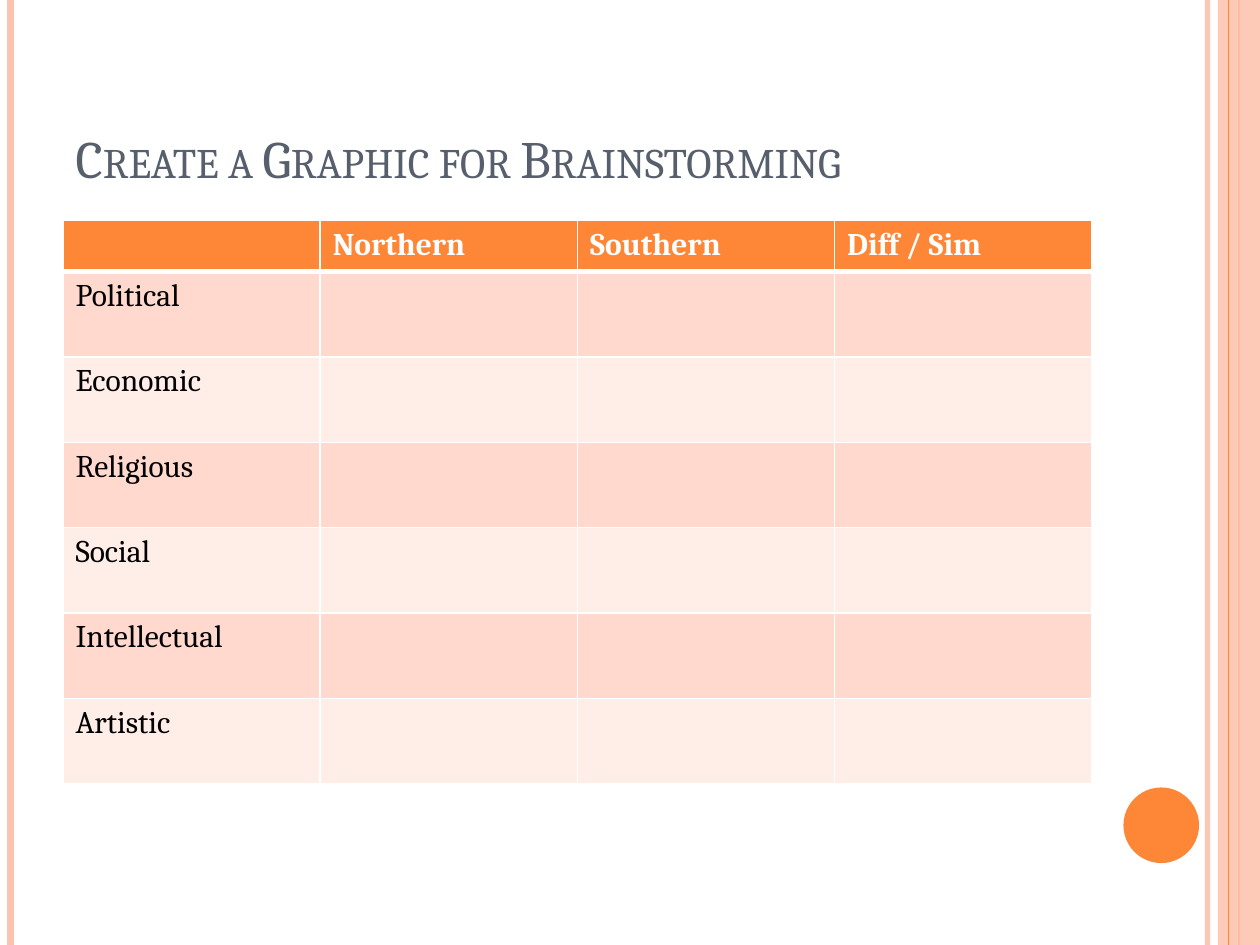
"""Builds a brainstorming slide with a comparison table."""
from lxml import etree
from pptx import Presentation
from pptx.dml.color import RGBColor
from pptx.enum.shapes import MSO_CONNECTOR, MSO_SHAPE
from pptx.enum.text import MSO_ANCHOR, MSO_AUTO_SIZE, PP_ALIGN
from pptx.oxml.ns import qn
from pptx.util import Inches, Pt

STRAIGHT = MSO_CONNECTOR.STRAIGHT
RECTANGLE, OVAL = MSO_SHAPE.RECTANGLE, MSO_SHAPE.OVAL
BOTTOM, LEFT, NO_FIT = MSO_ANCHOR.BOTTOM, PP_ALIGN.LEFT, MSO_AUTO_SIZE.NONE
TITLE_ONLY = 5
ROWS = 90
WHITE, BLACK, SLATE = "FFFFFF", "000000", "575F6D"
ORANGE, PEACH = "FE8637", "FEC3AE"
BANDS = ("FFD9CE", "FFEDE8")

HEADINGS = ["", "Northern", "Southern", "Diff / Sim"]
TOPICS = ["Political", "Economic", "Religious", "Social", "Intellectual", "Artistic"]


def rgb(code):
    """Turn a hex string into a colour."""
    return RGBColor.from_string(code)


def grid(units):
    """Turn grid units, twelve to the inch, into a length."""
    return Inches(units / 12)


def set_alpha(element, percent):
    """Make the first solid colour inside an element translucent."""
    colour = next(element.iter(qn("a:srgbClr")))
    etree.SubElement(colour, qn("a:alpha"), val=str(percent * 1000))


class SlideBuilder:
    """Holds the style and the current slide."""

    def __init__(self, slide, font="Cambria"):
        """Keep the slide and its font."""
        self.slide = slide
        self.font = font

    def style(self, paragraph, size, colour, bold=False):
        """Format every run of a paragraph."""
        for run in paragraph.runs:
            run.font.name, run.font.size, run.font.bold = self.font, Pt(size), bold
            run.font.color.rgb = rgb(colour)

    def stripe(self, column, colour, width, alpha=100):
        """Draw a vertical line over the whole slide height."""
        line = self.slide.shapes.add_connector(
            STRAIGHT, grid(column), 0, grid(column), grid(ROWS))
        line.line.color.rgb = rgb(colour)
        line.line.width = Pt(width)
        properties = line._element.spPr
        if alpha < 100:
            set_alpha(properties, alpha)
        etree.SubElement(properties, qn("a:effectLst"))

    def shape(self, kind, box, colour, alpha=100):
        """Draw a filled preset shape without outline."""
        figure = self.slide.shapes.add_shape(kind, *map(grid, box))
        figure.shadow.inherit = False
        figure.fill.solid()
        figure.fill.fore_color.rgb = rgb(colour)
        figure.line.fill.background()
        if alpha < 100:
            set_alpha(figure._element.spPr, alpha)

    def title(self, text, box):
        """Place the title in small capitals."""
        heading = self.slide.shapes.title
        heading.left, heading.top, heading.width, heading.height = map(grid, box)
        frame = heading.text_frame
        frame.text = text
        frame.auto_size, frame.vertical_anchor = NO_FIT, BOTTOM
        paragraph = frame.paragraphs[0]
        paragraph.alignment = LEFT
        self.style(paragraph, 30, SLATE)
        paragraph.runs[0].font._element.set("cap", "small")

    def cell(self, cell, text, fill, colour, bold, edges):
        """Fill one table cell and draw its white borders."""
        cell.text = text
        self.style(cell.text_frame.paragraphs[0], 18, colour, bold)
        properties = cell._tc.get_or_add_tcPr()
        for side, width in edges.items():
            border = etree.SubElement(properties, qn(f"a:ln{side}"), w=str(Pt(width)))
            paint = etree.SubElement(border, qn("a:solidFill"))
            etree.SubElement(paint, qn("a:srgbClr"), val=WHITE)
        cell.fill.solid()
        cell.fill.fore_color.rgb = rgb(fill)

    def table(self, headings, topics, box, header_height):
        """Draw a banded table with topics down the first column."""
        contents = [headings] + [[topic] + [""] * (len(headings) - 1) for topic in topics]
        matrix = self.slide.shapes.add_table(
            len(contents), len(headings), *map(grid, box)).table
        topic_height = (box[3] - header_height) / len(topics)
        for index, texts in enumerate(contents):
            header = index == 0
            matrix.rows[index].height = grid(header_height if header else topic_height)
            fill = ORANGE if header else BANDS[(index - 1) % 2]
            edges = {"L": 1, "R": 1, "T": 3 if index == 1 else 1, "B": 3 if header else 1}
            for column, text in enumerate(texts):
                self.cell(matrix.cell(index, column), text, fill,
                          WHITE if header else BLACK, header, edges)


def main():
    """Build and save the slide."""
    deck = Presentation()
    deck.slide_width, deck.slide_height = Inches(10), Inches(7.5)
    builder = SlideBuilder(deck.slides.add_slide(deck.slide_layouts[TITLE_ONLY]))
    builder.stripe(115, PEACH, 3, alpha=93)
    builder.stripe(1, PEACH, 4.5)
    builder.stripe(118, ORANGE, 1.5)
    builder.shape(RECTANGLE, (116, 0, 4, ROWS), PEACH, alpha=87)
    builder.stripe(117, ORANGE, 0.75)
    builder.shape(OVAL, (107, 75, 7.2, 7.2), ORANGE)
    builder.title("Create a Graphic for Brainstorming", (6, 3.6, 98, 15))
    builder.table(HEADINGS, TOPICS, (6, 21, 98, 53.6), header_height=4.8)
    deck.save("out.pptx")


if __name__ == "__main__":
    main()
